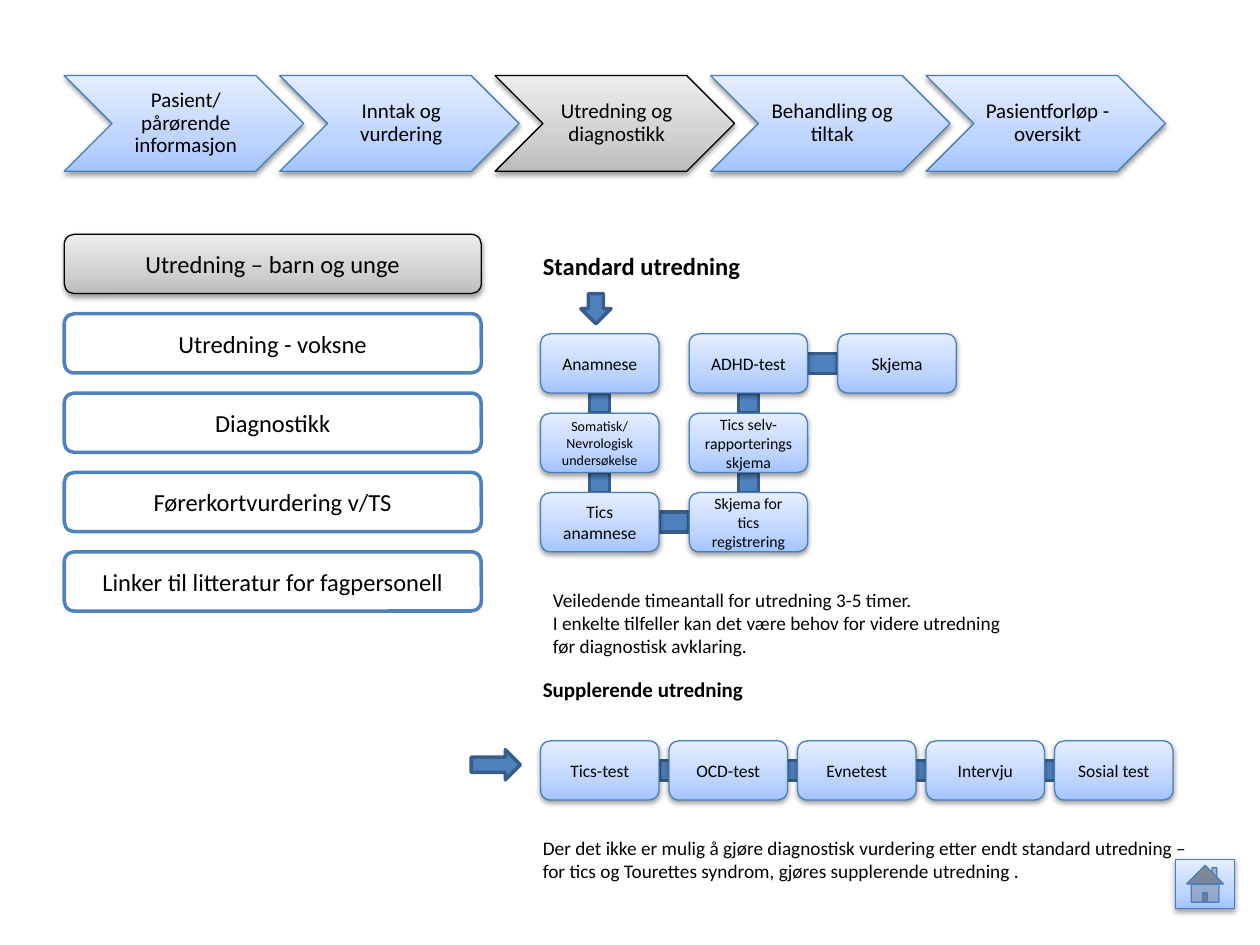
from lxml import etree
from pptx import Presentation
from pptx.dml.color import RGBColor
from pptx.enum.shapes import MSO_SHAPE
from pptx.enum.text import MSO_ANCHOR, MSO_AUTO_SIZE, PP_ALIGN
from pptx.oxml.ns import qn
from pptx.util import Inches, Pt

RECTANGLE, ROUNDED = MSO_SHAPE.RECTANGLE, MSO_SHAPE.ROUNDED_RECTANGLE
CHEVRON, HOME = MSO_SHAPE.CHEVRON, MSO_SHAPE.ACTION_BUTTON_HOME
DOWN_ARROW, RIGHT_ARROW = MSO_SHAPE.DOWN_ARROW, MSO_SHAPE.RIGHT_ARROW
CENTER, LEFT = PP_ALIGN.CENTER, PP_ALIGN.LEFT
MIDDLE, TOP = MSO_ANCHOR.MIDDLE, MSO_ANCHOR.TOP
FIT_SHAPE = MSO_AUTO_SIZE.SHAPE_TO_FIT_TEXT

BLACK = RGBColor(0x00, 0x00, 0x00)
WHITE = RGBColor(0xFF, 0xFF, 0xFF)
BLUE = RGBColor(0x4F, 0x81, 0xBD)
DARK_BLUE = RGBColor(0x38, 0x5D, 0x8A)
EDGE_BLUE = RGBColor(0x4A, 0x7E, 0xBB)
BLUE_STOPS = [(0, RGBColor(0xA3, 0xC4, 0xFF)), (35, RGBColor(0xBF, 0xD5, 0xFF)),
              (100, RGBColor(0xE5, 0xEE, 0xFF))]
GRAY_STOPS = [(0, RGBColor(0xBC, 0xBC, 0xBC)), (35, RGBColor(0xD0, 0xD0, 0xD0)),
              (100, RGBColor(0xED, 0xED, 0xED))]
FONT = "Calibri"

PHASES = ["Pasient/ pårørende informasjon", "Inntak og vurdering", "Utredning og diagnostikk",
          "Behandling og tiltak", "Pasientforløp - oversikt"]
ACTIVE_PHASE = 2
MENU = ["Utredning – barn og unge", "Utredning - voksne", "Diagnostikk",
        "Førerkortvurdering v/TS", "Linker til litteratur for fagpersonell"]
ACTIVE_MENU = 0
STANDARD_STEPS = [
    (0, 0, ["Anamnese"], 10),
    (0, 1, ["Somatisk/", "Nevrologisk undersøkelse"], 8),
    (0, 2, ["Tics anamnese"], 10),
    (1, 2, ["Skjema for tics registrering"], 9),
    (1, 1, ["Tics selv-rapporterings skjema"], 9),
    (1, 0, ["ADHD-test"], 10),
    (2, 0, ["Skjema"], 10),
]
EXTRA_STEPS = ["Tics-test", "OCD-test", "Evnetest", "Intervju", "Sosial test"]
NOTES = [
    (4.21, 1.94, 4.49, 0.34, ["Standard utredning"], 14, True),
    (4.29, 4.62, 3.94, 0.66,
     ["Veiledende timeantall for utredning 3-5 timer.",
      "I enkelte tilfeller kan det være behov for videre utredning før diagnostisk avklaring."],
     11, False),
    (4.21, 5.32, 4.49, 0.3, ["Supplerende utredning"], 12, True),
    (4.21, 6.59, 5.51, 0.47,
     ["Der det ikke er mulig å gjøre diagnostisk vurdering etter endt standard utredning – "
      "for tics og Tourettes syndrom, gjøres supplerende utredning ."], 11, False),
]

STEP_LEFT, STEP_TOP, STEP_WIDTH, STEP_HEIGHT = 4.29, 2.65, 0.94, 0.47
COLUMN_PITCH, ROW_PITCH = 1.18, 0.63
EXTRA_TOP, EXTRA_PITCH = 5.88, 1.02
BAR = 0.16
MENU_LEFT, MENU_TOP, MENU_WIDTH = 0.51, 1.86, 3.31
PHASE_LEFT, PHASE_TOP, PHASE_WIDTH, PHASE_HEIGHT, PHASE_PITCH = 0.51, 0.6, 1.9, 0.76, 1.71


def write(box, lines, size, align=CENTER, anchor=MIDDLE, bold=False):
    frame = box.text_frame
    frame.word_wrap = True
    frame.vertical_anchor = anchor
    frame.text = "\n".join(lines)
    for para in frame.paragraphs:
        para.alignment = align
        para.font.name = FONT
        para.font.size = Pt(size)
        para.font.bold = bold
        para.font.color.rgb = BLACK


def add_flat(shapes, kind, left, top, width, height, fill=BLUE, line=DARK_BLUE):
    shape = shapes.add_shape(kind, Inches(left), Inches(top), Inches(width), Inches(height))
    shape.fill.solid()
    shape.fill.fore_color.rgb = fill
    shape.line.color.rgb = line
    shape.line.width = Pt(2)
    shape.shadow.inherit = False
    return shape


def add_color(parent, color):
    return etree.SubElement(parent, qn("a:srgbClr"), val=str(color))


def add_raised(shapes, kind, left, top, width, height, active=False):
    shape = add_flat(shapes, kind, left, top, width, height, line=BLACK if active else EDGE_BLUE)
    shape.line.width = Pt(0.75)
    shape.fill.gradient()
    properties = shape._element.spPr
    gradient = properties.find(qn("a:gradFill"))
    for child in list(gradient):
        gradient.remove(child)
    stops = etree.SubElement(gradient, qn("a:gsLst"))
    for position, color in GRAY_STOPS if active else BLUE_STOPS:
        add_color(etree.SubElement(stops, qn("a:gs"), pos=str(position * 1000)), color)
    etree.SubElement(gradient, qn("a:lin"), ang="16200000", scaled="0")
    shadow = etree.SubElement(properties.find(qn("a:effectLst")), qn("a:outerShdw"),
                              blurRad="40000", dist="20000", dir="5400000", rotWithShape="0")
    etree.SubElement(add_color(shadow, BLACK), qn("a:alpha"), val="38000")
    return shape


def add_text(shapes, left, top, width, height):
    return shapes.add_textbox(Inches(left), Inches(top), Inches(width), Inches(height))


def add_phases(page):
    for index, label in enumerate(PHASES):
        left = PHASE_LEFT + index * PHASE_PITCH
        group = page.shapes.add_group_shape()
        add_raised(group.shapes, CHEVRON, left, PHASE_TOP, PHASE_WIDTH, PHASE_HEIGHT,
                   index == ACTIVE_PHASE)
        box = add_text(group.shapes, left + PHASE_HEIGHT / 2, PHASE_TOP,
                       PHASE_WIDTH - PHASE_HEIGHT, PHASE_HEIGHT)
        frame = box.text_frame
        frame.margin_left = Inches(0.05)
        frame.margin_top = frame.margin_right = frame.margin_bottom = Inches(0.02)
        write(box, [label], 12)
        frame.paragraphs[0].line_spacing = 0.9


def add_menu(page):
    for index, label in enumerate(MENU):
        place = (MENU_LEFT, MENU_TOP + index * ROW_PITCH, MENU_WIDTH, STEP_HEIGHT)
        if index == ACTIVE_MENU:
            box = add_raised(page.shapes, ROUNDED, *place, active=True)
        else:
            box = add_flat(page.shapes, ROUNDED, *place, fill=WHITE, line=BLUE)
        write(box, [label], 14)


def add_standard_steps(page):
    places = [(STEP_LEFT + column * COLUMN_PITCH, STEP_TOP + row * ROW_PITCH)
              for column, row, _, _ in STANDARD_STEPS]
    for (left, top), (next_left, next_top) in zip(places, places[1:]):
        if left == next_left:
            add_flat(page.shapes, RECTANGLE, left + (STEP_WIDTH - BAR) / 2,
                     min(top, next_top) + STEP_HEIGHT, BAR, ROW_PITCH - STEP_HEIGHT)
        else:
            add_flat(page.shapes, RECTANGLE, left + STEP_WIDTH,
                     top + (STEP_HEIGHT - BAR) / 2, COLUMN_PITCH - STEP_WIDTH, BAR)
    for (left, top), (_, _, lines, size) in zip(places, STANDARD_STEPS):
        write(add_raised(page.shapes, ROUNDED, left, top, STEP_WIDTH, STEP_HEIGHT), lines, size)
    add_flat(page.shapes, DOWN_ARROW, 4.61, 2.33, 0.24, 0.24)


def add_extra_steps(page):
    span = (len(EXTRA_STEPS) - 1) * EXTRA_PITCH
    add_flat(page.shapes, RECTANGLE, STEP_LEFT + STEP_WIDTH,
             EXTRA_TOP + (STEP_HEIGHT - BAR) / 2, span - STEP_WIDTH + 0.08, BAR)
    for index, label in enumerate(EXTRA_STEPS):
        box = add_raised(page.shapes, ROUNDED, STEP_LEFT + index * EXTRA_PITCH, EXTRA_TOP,
                         STEP_WIDTH, STEP_HEIGHT)
        write(box, [label], 10)
    add_flat(page.shapes, RIGHT_ARROW, 3.74, 5.95, 0.39, 0.24)


def add_notes(page):
    for left, top, width, height, lines, size, bold in NOTES:
        box = add_text(page.shapes, left, top, width, height)
        write(box, lines, size, LEFT, TOP, bold)
        box.text_frame.auto_size = FIT_SHAPE


def main():
    deck = Presentation()
    deck.slide_width, deck.slide_height = Inches(10), Inches(7.5)
    page = deck.slides.add_slide(deck.slide_layouts[6])
    add_menu(page)
    add_standard_steps(page)
    add_extra_steps(page)
    add_notes(page)
    add_phases(page)
    add_raised(page.shapes, HOME, 9.33, 6.82, 0.47, 0.39)
    deck.save("out.pptx")


if __name__ == "__main__":
    main()
